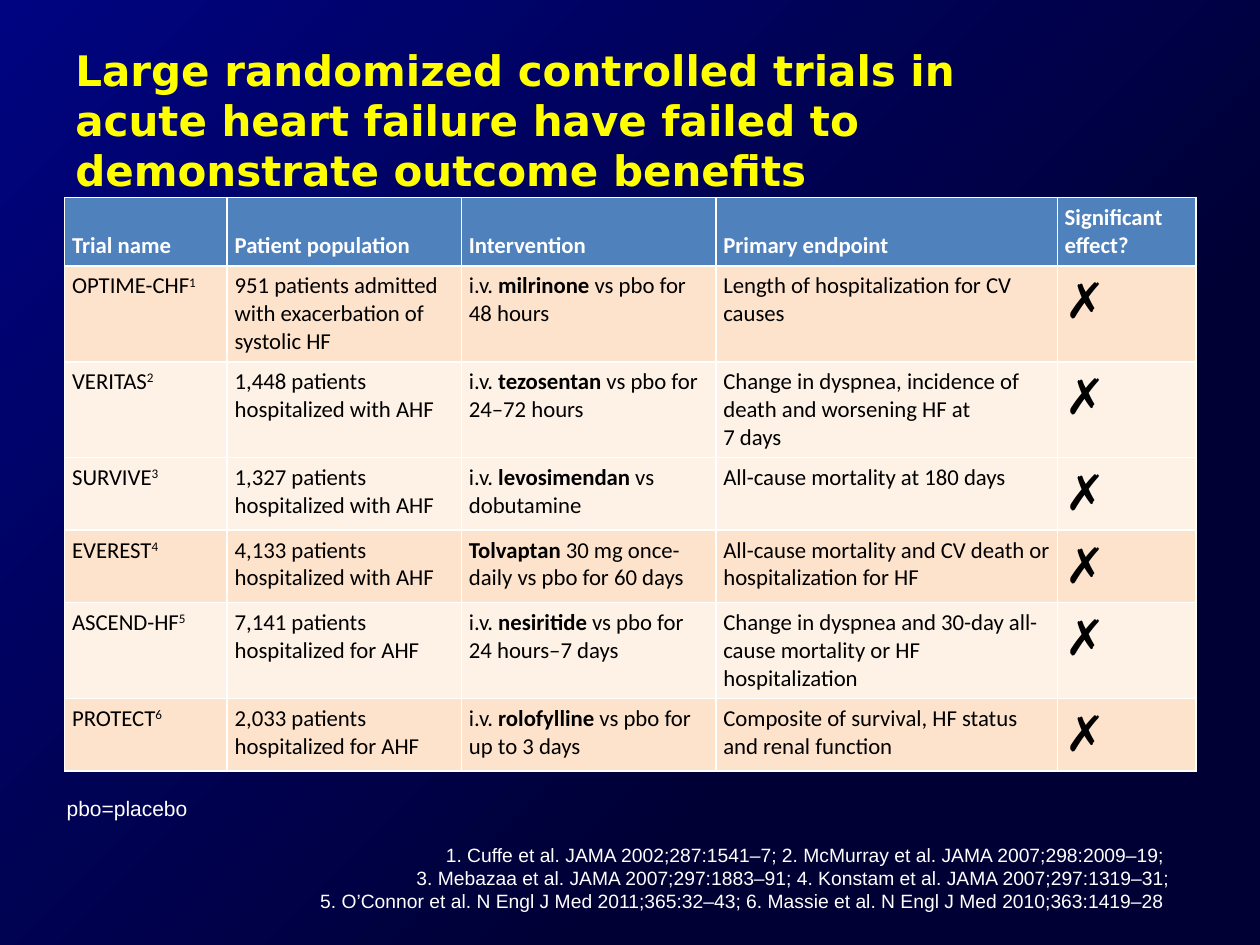
from lxml import etree
from pptx import Presentation
from pptx.dml.color import RGBColor
from pptx.enum.shapes import MSO_SHAPE
from pptx.enum.text import MSO_ANCHOR, PP_ALIGN
from pptx.oxml.ns import qn
from pptx.util import Pt

RECTANGLE = MSO_SHAPE.RECTANGLE
TOP, BOTTOM = MSO_ANCHOR.TOP, MSO_ANCHOR.BOTTOM
LEFT, RIGHT = PP_ALIGN.LEFT, PP_ALIGN.RIGHT

WIDTH, HEIGHT = 720, 540
WHITE, BLACK, YELLOW = "FFFFFF", "000000", "FFFF00"
NAVY, MIDNIGHT = "000480", "000035"
HEADER_FILL, PEACH, CREAM = "4F81BD", "FEE3CC", "FEF2E7"

TITLE = ("Large randomized controlled trials in acute heart failure "
         "have failed to demonstrate outcome benefits")
HEADERS = ["Trial name", "Patient population", "Intervention",
           "Primary endpoint", "Significant effect?"]
COLUMN_WIDTHS = [92.9, 133.9, 145.4, 195.1, 79.2]
HEADER_HEIGHT = 39
TRIALS = [
    ("OPTIME-CHF", "951 patients admitted with exacerbation of systolic HF",
     ("i.v. ", "milrinone", " vs pbo for 48 hours"),
     "Length of hospitalization for CV causes", PEACH, 54),
    ("VERITAS", "1,448 patients hospitalized with AHF",
     ("i.v. ", "tezosentan", " vs pbo for 24–72 hours"),
     "Change in dyspnea, incidence of death and worsening HF at \n7 days", CREAM, 54),
    ("SURVIVE", "1,327 patients hospitalized with AHF",
     ("i.v. ", "levosimendan", " vs dobutamine"),
     "All-cause mortality at 180 days", CREAM, 41),
    ("EVEREST", "4,133 patients hospitalized with AHF",
     ("", "Tolvaptan", " 30 mg once-daily vs pbo for 60 days"),
     "All-cause mortality and CV death or hospitalization for HF", PEACH, 41),
    ("ASCEND-HF", "7,141 patients hospitalized for AHF",
     ("i.v. ", "nesiritide", " vs pbo for 24 hours–7 days"),
     "Change in dyspnea and 30-day all-cause mortality or HF hospitalization", CREAM, 54),
    ("PROTECT", "2,033 patients hospitalized for AHF",
     ("i.v. ", "rolofylline ", "vs pbo for up to 3 days"),
     "Composite of survival, HF status and renal function", PEACH, 41),
]
REFERENCES = [
    "1. Cuffe et al. JAMA 2002;287:1541–7; 2. McMurray et al. JAMA 2007;298:2009–19; ",
    "3. Mebazaa et al. JAMA 2007;297:1883–91; 4. Konstam et al. JAMA 2007;297:1319–31;",
    "5. O’Connor et al. N Engl J Med 2011;365:32–43; 6. Massie et al. N Engl J Med 2010;363:1419–28 ",
]


def color(value):
    return RGBColor.from_string(value)


def add_span(para, text, size, font, ink, bold=False, superscript=False):
    for index, piece in enumerate(text.split("\n")):
        if index:
            para.add_line_break()
        span = para.add_run()
        span.text = piece
        span.font.size = Pt(size)
        span.font.name = font
        span.font.bold = bold
        span.font.color.rgb = color(ink)
        if superscript:
            span.font._element.set("baseline", "30000")


def add_background(page):
    box = page.shapes.add_shape(RECTANGLE, 0, 0, Pt(WIDTH), Pt(HEIGHT))
    box.shadow.inherit = False
    box.line.fill.background()
    box.fill.gradient()
    box.fill.gradient_angle = 315
    for stop, shade, position in zip(box.fill.gradient_stops, (NAVY, MIDNIGHT), (0, 0.7)):
        stop.color.rgb = color(shade)
        stop.position = position


def add_text(page, frame, lines, size, font, ink, bold=False,
             align=LEFT, anchor=TOP, insets=(7.2, 3.6)):
    box = page.shapes.add_textbox(*[Pt(length) for length in frame])
    text = box.text_frame
    text.word_wrap = True
    text.vertical_anchor = anchor
    text.margin_left = text.margin_right = Pt(insets[0])
    text.margin_top = text.margin_bottom = Pt(insets[1])
    for index, line in enumerate(lines):
        para = text.add_paragraph() if index else text.paragraphs[0]
        para.alignment = align
        add_span(para, line, size, font, ink, bold)


def add_borders(cell):
    properties = cell._tc.get_or_add_tcPr()
    for side in ("a:lnL", "a:lnR", "a:lnT", "a:lnB"):
        line = etree.SubElement(properties, qn(side), w=str(Pt(1)))
        fill = etree.SubElement(line, qn("a:solidFill"))
        etree.SubElement(fill, qn("a:srgbClr"), val=WHITE)


def fill_cell(cell, spans, fill, ink=BLACK, size=13, anchor=TOP):
    add_borders(cell)
    cell.fill.solid()
    cell.fill.fore_color.rgb = color(fill)
    cell.vertical_anchor = anchor
    cell.margin_left = Pt(4.3)
    cell.margin_right = cell.margin_top = cell.margin_bottom = Pt(3.6)
    para = cell.text_frame.paragraphs[0]
    for text, style in spans:
        if text:
            add_span(para, text, size, "Calibri", ink, **style)


def add_trials(page):
    heights = [HEADER_HEIGHT] + [trial[-1] for trial in TRIALS]
    table = page.shapes.add_table(
        len(heights), len(HEADERS), Pt(36.9), Pt(113),
        Pt(sum(COLUMN_WIDTHS)), Pt(sum(heights))).table
    for column, width in zip(table.columns, COLUMN_WIDTHS):
        column.width = Pt(width)
    for row, height in zip(table.rows, heights):
        row.height = Pt(height)

    plain, strong, raised = {}, {"bold": True}, {"superscript": True}
    for index, header in enumerate(HEADERS):
        fill_cell(table.cell(0, index), [(header, strong)], HEADER_FILL, WHITE, anchor=BOTTOM)
    for number, (name, patients, drug, endpoint, fill, _) in enumerate(TRIALS, 1):
        contents = [
            [(name, plain), (str(number), raised)],
            [(patients, plain)],
            list(zip(drug, (plain, strong, plain))),
            [(endpoint, plain)],
        ]
        for index, spans in enumerate(contents):
            fill_cell(table.cell(number, index), spans, fill)
        fill_cell(table.cell(number, len(contents)), [("✗", plain)], fill, size=28)


def main():
    deck = Presentation()
    deck.slide_width, deck.slide_height = Pt(WIDTH), Pt(HEIGHT)
    page = deck.slides.add_slide(deck.slide_layouts[6])
    add_background(page)
    add_trials(page)
    add_text(page, (113, 481.7, 555.8, 40.3), REFERENCES, 11, "Arial", WHITE,
             align=RIGHT, insets=(0, 0))
    add_text(page, (31, 450.7, 558, 21.6), ["pbo=placebo"], 12, "Arial", WHITE, anchor=BOTTOM)
    add_text(page, (36, 21.6, 584, 90), [TITLE], 24, "DejaVu Sans", YELLOW, bold=True)
    deck.save("out.pptx")


if __name__ == "__main__":
    main()
